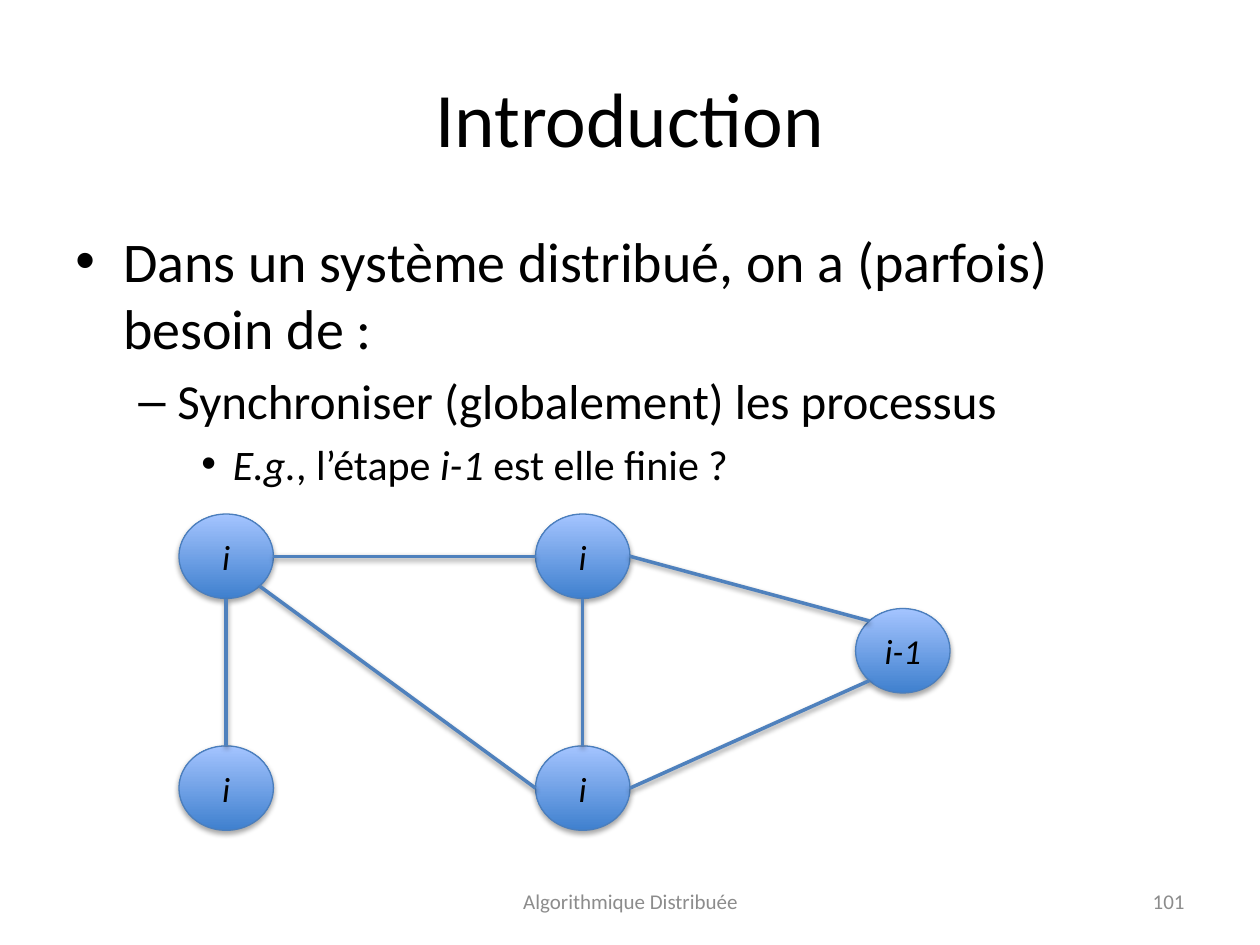
from dataclasses import dataclass
from math import cos, pi, sin

from lxml.etree import SubElement
from pptx import Presentation
from pptx.dml.color import RGBColor
from pptx.enum.shapes import MSO_CONNECTOR, MSO_SHAPE
from pptx.enum.text import MSO_ANCHOR, PP_ALIGN
from pptx.oxml.ns import qn
from pptx.util import Inches, Pt


@dataclass(frozen=True)
class Theme:
    """Hold the colours, font and type sizes of the slide."""
    font: str = "Calibri"
    text: str = "000000"
    muted: str = "8C8C8C"
    node_bottom: str = "3F80CE"
    node_top: str = "A4C4FF"
    node_line: str = "4B7EBC"
    link: str = "4F81BD"
    title: int = 44
    levels: tuple = (32, 28, 24)
    node: int = 20
    footer: int = 12


THEME = Theme()
NODE_W, NODE_H = 0.75, 0.67
TOP, TOP_LEFT, LEFT, BOTTOM_LEFT, BOTTOM, BOTTOM_RIGHT, RIGHT = range(7)

NODES = {
    "north_west": ("i", 1.42, 4.08),
    "south_west": ("i", 1.42, 5.92),
    "south": ("i", 4.25, 5.92),
    "north": ("i", 4.25, 4.08),
    "east": ("i-1", 6.79, 4.83),
}
LINKS = [
    ("north_west", RIGHT, "north", LEFT),
    ("north_west", BOTTOM, "south_west", TOP),
    ("north_west", BOTTOM_RIGHT, "south", LEFT),
    ("north", BOTTOM, "south", TOP),
    ("north", RIGHT, "east", TOP_LEFT),
    ("south", RIGHT, "east", BOTTOM_LEFT),
]
BULLETS = [
    ("•", 0.38, 0.38, [("Dans un système distribué, on a (parfois) besoin de :", False)]),
    ("–", 0.81, 0.31, [("Synchroniser (globalement) les processus", False)]),
    ("•", 1.25, 0.25, [("E.g.", True), (", l’étape ", False), ("i-1", True),
                       (" est elle finie ?", False)]),
]


def style_run(r, size, color=THEME.text, italic=False):
    """Format one run."""
    r.font.name = THEME.font
    r.font.size = Pt(size)
    r.font.italic = italic
    r.font.color.rgb = RGBColor.from_string(color)


def add_frame(slide, left, top, width, height, anchor=MSO_ANCHOR.MIDDLE):
    """Add a wrapping text box and return its text frame."""
    box = slide.shapes.add_textbox(Inches(left), Inches(top), Inches(width), Inches(height))
    tf = box.text_frame
    tf.word_wrap = True
    tf.vertical_anchor = anchor
    return tf


def add_label(slide, text, place, size, color, align):
    """Add a single line of text."""
    p = add_frame(slide, *place).paragraphs[0]
    p.text = text
    p.alignment = align
    style_run(p.runs[0], size, color)


def add_bullets(slide, place):
    """Add the three-level bullet list."""
    tf = add_frame(slide, *place, anchor=MSO_ANCHOR.TOP)
    for level, (mark, indent, hang, parts) in enumerate(BULLETS):
        p = tf.paragraphs[0] if level == 0 else tf.add_paragraph()
        p.level = level
        size = THEME.levels[level]
        p.space_before = Pt(size * 0.2)
        pPr = p._p.get_or_add_pPr()
        pPr.set("marL", str(Inches(indent)))
        pPr.set("indent", str(-Inches(hang)))
        SubElement(pPr, qn("a:buFont"), typeface="Arial")
        SubElement(pPr, qn("a:buChar"), char=mark)
        for text, italic in parts:
            r = p.add_run()
            r.text = text
            style_run(r, size, italic=italic)


def add_shadow(effects, distance, opacity):
    """Put a soft downward shadow in an effect list."""
    shadow = SubElement(effects, qn("a:outerShdw"), blurRad=str(Pt(3.1)),
                        dist=str(Pt(distance)), dir="5400000", rotWithShape="0")
    color = SubElement(shadow, qn("a:srgbClr"), val="000000")
    SubElement(color, qn("a:alpha"), val=str(opacity * 1000))


def add_node(slide, text, left, top):
    """Add one process as a shaded ellipse."""
    sp = slide.shapes.add_shape(MSO_SHAPE.OVAL, Inches(left), Inches(top),
                                Inches(NODE_W), Inches(NODE_H))
    sp.fill.gradient()
    sp.fill.gradient_angle = 90
    for stop, color in zip(sp.fill.gradient_stops, (THEME.node_bottom, THEME.node_top)):
        stop.color.rgb = RGBColor.from_string(color)
    sp.line.color.rgb = RGBColor.from_string(THEME.node_line)
    sp.line.width = Pt(0.75)
    sp.shadow.inherit = False
    add_shadow(sp._element.spPr.find(qn("a:effectLst")), 1.8, 35)
    tf = sp.text_frame
    tf.word_wrap = False
    tf.vertical_anchor = MSO_ANCHOR.MIDDLE
    p = tf.paragraphs[0]
    p.text = text
    p.alignment = PP_ALIGN.CENTER
    style_run(p.runs[0], THEME.node, italic=True)
    return sp


def site_point(sp, site):
    """Locate an ellipse's connection site, counted anticlockwise from the top."""
    angle = site * pi / 4
    x = sp.left + sp.width / 2 * (1 - sin(angle))
    y = sp.top + sp.height / 2 * (1 - cos(angle))
    return round(x), round(y)


def add_link(slide, start, start_site, end, end_site):
    """Join two ellipses with a straight connector glued at both ends."""
    link = slide.shapes.add_connector(MSO_CONNECTOR.STRAIGHT, *site_point(start, start_site),
                                      *site_point(end, end_site))
    link.line.color.rgb = RGBColor.from_string(THEME.link)
    link.line.width = Pt(2)
    add_shadow(SubElement(link._element.spPr, qn("a:effectLst")), 1.6, 38)
    joints = link._element.nvCxnSpPr.cNvCxnSpPr
    for tag, sp, site in (("a:stCxn", start, start_site), ("a:endCxn", end, end_site)):
        SubElement(joints, qn(tag), id=str(sp.shape_id), idx=str(site))


def main():
    """Build and save the slide."""
    prs = Presentation()
    prs.slide_width, prs.slide_height = Inches(10), Inches(7.5)
    slide = prs.slides.add_slide(prs.slide_layouts[6])
    add_label(slide, "Introduction", (0.5, 0.3, 9, 1.25), THEME.title, THEME.text,
              PP_ALIGN.CENTER)
    add_bullets(slide, (0.5, 1.75, 9, 2.42))
    add_label(slide, "Algorithmique Distribuée", (3.42, 6.95, 3.17, 0.4), THEME.footer,
              THEME.muted, PP_ALIGN.CENTER)
    add_label(slide, "101", (7.17, 6.95, 2.33, 0.4), THEME.footer, THEME.muted,
              PP_ALIGN.RIGHT)
    nodes = {name: add_node(slide, *node) for name, node in NODES.items()}
    for start, start_site, end, end_site in LINKS:
        add_link(slide, nodes[start], start_site, nodes[end], end_site)
    prs.save("out.pptx")


if __name__ == "__main__":
    main()
